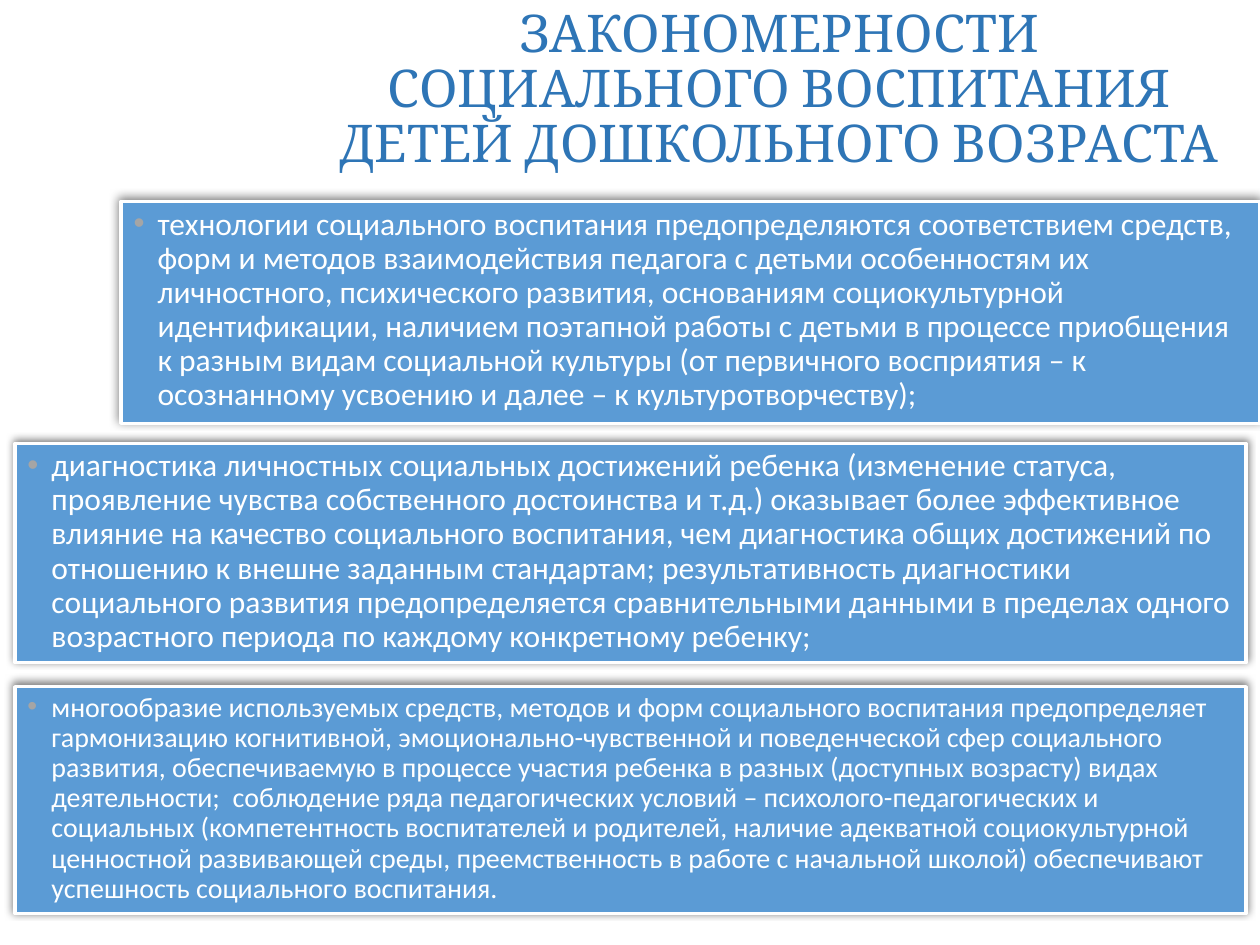
from lxml import etree
from pptx import Presentation
from pptx.dml.color import RGBColor
from pptx.enum.shapes import MSO_SHAPE
from pptx.enum.text import MSO_ANCHOR, MSO_AUTO_SIZE, PP_ALIGN
from pptx.oxml.ns import qn
from pptx.util import Inches, Pt

RECTANGLE = MSO_SHAPE.RECTANGLE
TOP, MIDDLE = MSO_ANCHOR.TOP, MSO_ANCHOR.MIDDLE
LEFT, CENTER = PP_ALIGN.LEFT, PP_ALIGN.CENTER
FIXED, GROW = MSO_AUTO_SIZE.NONE, MSO_AUTO_SIZE.SHAPE_TO_FIT_TEXT

COLORS = {
    "heading": "2E75B6",
    "panel": "5B9BD5",
    "border": "FFFFFF",
    "panel_text": "FFFFFF",
    "bullet": "A5A5A5",
    "shadow": "000000",
}

HEADING = "ЗАКОНОМЕРНОСТИ СОЦИАЛЬНОГО ВОСПИТАНИЯ ДЕТЕЙ ДОШКОЛЬНОГО ВОЗРАСТА"
TECHNOLOGIES = (
    "технологии социального воспитания предопределяются соответствием средств, "
    "форм и методов взаимодействия педагога с детьми особенностям их личностного, "
    "психического развития, основаниям социокультурной идентификации, наличием "
    "поэтапной работы с детьми в процессе приобщения к разным видам социальной "
    "культуры (от первичного восприятия – к осознанному усвоению и далее – "
    "к культуротворчеству);"
)
DIAGNOSTICS = (
    "диагностика личностных социальных достижений ребенка (изменение статуса, "
    "проявление чувства собственного достоинства и т.д.) оказывает более эффективное "
    "влияние на качество социального воспитания, чем диагностика общих достижений по "
    "отношению к внешне заданным стандартам; результативность диагностики социального "
    "развития предопределяется сравнительными данными в пределах одного возрастного "
    "периода по каждому конкретному ребенку;"
)
DIVERSITY = (
    "многообразие используемых средств, методов и форм социального воспитания "
    "предопределяет гармонизацию когнитивной, эмоционально-чувственной и поведенческой "
    "сфер социального развития, обеспечиваемую в процессе участия ребенка в разных "
    "(доступных возрасту) видах деятельности;  соблюдение ряда педагогических условий – "
    "психолого-педагогических и социальных (компетентность воспитателей и родителей, "
    "наличие адекватной социокультурной ценностной развивающей среды, преемственность "
    "в работе с начальной школой) обеспечивают успешность социального воспитания."
)


def rgb(name):
    return RGBColor.from_string(COLORS[name])


def place(shape, left, top, width, height):
    shape.left, shape.top = Inches(left), Inches(top)
    shape.width, shape.height = Inches(width), Inches(height)


def add_bullet(paragraph):
    properties = paragraph._p.get_or_add_pPr()
    properties.set("marL", str(Inches(0.19)))
    properties.set("indent", str(-Inches(0.19)))
    bullet_color = etree.SubElement(properties, qn("a:buClr"))
    etree.SubElement(bullet_color, qn("a:srgbClr"), val=COLORS["bullet"])
    etree.SubElement(properties, qn("a:buFont"), typeface="Arial")
    etree.SubElement(properties, qn("a:buChar"), char="•")


def write_text(shape, text, *, size, font, color, align=LEFT, anchor=TOP,
               spacing=0.9, fit=FIXED, bullet=False):
    frame = shape.text_frame
    frame.word_wrap = True
    frame.auto_size = fit
    frame.vertical_anchor = anchor
    paragraph = frame.paragraphs[0]
    if bullet:
        add_bullet(paragraph)
    paragraph.alignment = align
    paragraph.line_spacing = spacing
    paragraph.space_before = Pt(0)
    run = paragraph.add_run()
    run.text = text
    run.font.size = Pt(size)
    run.font.name = font
    run.font.color.rgb = rgb(color)


def add_shadow(shape):
    shape.shadow.inherit = False
    effects = shape._element.spPr.find(qn("a:effectLst"))
    shadow = etree.SubElement(
        effects, qn("a:outerShdw"), blurRad=str(Pt(5)), dist=str(Pt(2)),
        dir=str(245 * 60000), algn="tl", rotWithShape="0")
    shade = etree.SubElement(shadow, qn("a:srgbClr"), val=COLORS["shadow"])
    etree.SubElement(shade, qn("a:alpha"), val="50000")


def style_panel(panel, text, size, fit):
    panel.fill.solid()
    panel.fill.fore_color.rgb = rgb("panel")
    panel.line.color.rgb = rgb("border")
    panel.line.width = Pt(2)
    add_shadow(panel)
    write_text(panel, text, size=size, font="Calibri", color="panel_text",
               fit=fit, bullet=True)


def add_panel(slide, text, top, height, size):
    panel = slide.shapes.add_shape(
        RECTANGLE, Inches(0.12), Inches(top), Inches(9.77), Inches(height))
    style_panel(panel, text, size, GROW)


def main():
    presentation = Presentation()
    presentation.slide_width, presentation.slide_height = Inches(10), Inches(7.5)
    slide = presentation.slides.add_slide(presentation.slide_layouts[1])

    heading = slide.shapes.title
    place(heading, 2.48, 0, 7.41, 1.45)
    write_text(heading, HEADING, size=29.7, font="Cambria", color="heading",
               align=CENTER, anchor=MIDDLE, spacing=0.88)

    technologies = slide.placeholders[1]
    place(technologies, 0.96, 1.6, 9.04, 1.76)
    style_panel(technologies, TECHNOLOGIES, 18, FIXED)

    add_panel(slide, DIAGNOSTICS, 3.52, 1.74, 18)
    add_panel(slide, DIVERSITY, 5.45, 1.8, 16)
    presentation.save("out.pptx")


if __name__ == "__main__":
    main()
